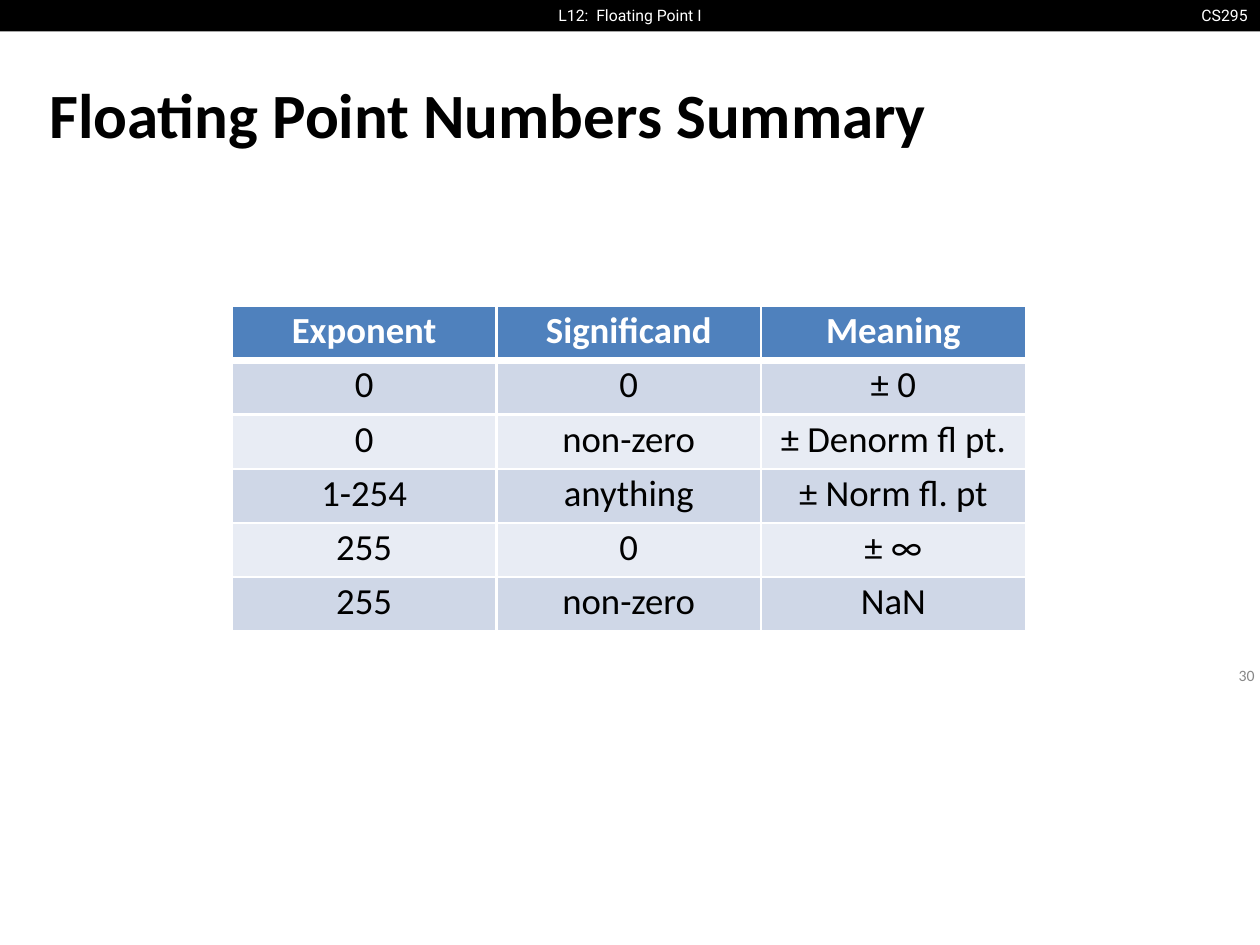
import pptx
import pptx.util
import pptx.dml.color
import pptx.enum.shapes
import pptx.enum.text
import pptx.oxml
import pptx.oxml.ns

Inches, Pt = pptx.util.Inches, pptx.util.Pt
ALIGN = pptx.enum.text.PP_ALIGN
ANCHOR = pptx.enum.text.MSO_ANCHOR

TITLE = "Floating Point Numbers Summary"
BAR = [
    ("CS295", 9.41, 0.59, ALIGN.RIGHT),
    ("L12:  Floating Point I", 4.07, 1.86, ALIGN.CENTER),
]
PAGE = "30"
ROWS = [
    ("Exponent", "Significand", "Meaning"),
    ("0", "0", "± 0"),
    ("0", "non-zero", "± Denorm fl pt."),
    ("1-254", "anything", "± Norm fl. pt"),
    ("255", "0", "± ∞"),
    ("255", "non-zero", "NaN"),
]
HEAD, BANDS = "4F81BD", ("E8ECF4", "CFD7E7")
COL, ROW = 2.1, 0.43
THIN, THICK = 1.5, 4.25


def paint(fill, color):
    fill.solid()
    fill.fore_color.rgb = pptx.dml.color.RGBColor.from_string(color)


def style(par, size, color, align, face="Calibri", bold=False):
    par.alignment = align
    par.font.size = Pt(size)
    par.font.name = face
    par.font.bold = bold
    paint(par.font.fill, color)


def inset(frame, left=0, top=0):
    frame.margin_left, frame.margin_top = Inches(left), Inches(top)
    frame.margin_right = frame.margin_bottom = 0


def label(slide, text, box):
    """Add a text box and return its frame."""
    frame = slide.shapes.add_textbox(*map(Inches, box)).text_frame
    frame.text = text
    return frame


def edge(cell, row):
    """Draw white cell borders, thick between header and body."""
    widths = {"L": THIN, "R": THIN,
              "T": THICK if row == 1 else THIN,
              "B": THICK if row == 0 else THIN}
    props = cell._tc.get_or_add_tcPr()
    for spot, (side, width) in enumerate(widths.items()):
        props.insert(spot, pptx.oxml.parse_xml(
            f'<a:ln{side} {pptx.oxml.ns.nsdecls("a")} w="{Pt(width)}">'
            '<a:solidFill><a:srgbClr val="FFFFFF"/></a:solidFill>'
            f'</a:ln{side}>'))


def add_bar(slide):
    bar = slide.shapes.add_shape(
        pptx.enum.shapes.MSO_SHAPE.RECTANGLE, 0, 0, Inches(10), Inches(0.25))
    bar.shadow.inherit = False
    paint(bar.fill, "000000")
    bar.line.fill.background()
    for text, left, width, align in BAR:
        frame = label(slide, text, (left, 0, width, 0.25))
        frame.word_wrap = False
        style(frame.paragraphs[0], 9, "FFFFFF", align, "Roboto")


def add_title(slide):
    title = slide.shapes.title
    title.left, title.top = Inches(0.39), Inches(0.48)
    title.width, title.height = Inches(9.19), Inches(0.83)
    frame = title.text_frame
    frame.text = TITLE
    frame.auto_size = pptx.enum.text.MSO_AUTO_SIZE.NONE
    frame.vertical_anchor = ANCHOR.MIDDLE
    inset(frame, top=0.01)
    style(frame.paragraphs[0], 36, "000000", ALIGN.LEFT, bold=True)


def add_grid(slide):
    count, wide = len(ROWS), len(ROWS[0])
    table = slide.shapes.add_table(
        count, wide, Inches(1.84), Inches(2.43),
        Inches(COL * wide), Inches(ROW * count)).table
    for col in table.columns:
        col.width = Inches(COL)
    for r, texts in enumerate(ROWS):
        table.rows[r].height = Inches(ROW)
        for c, text in enumerate(texts):
            cell = table.cell(r, c)
            cell.text = text
            inset(cell, top=0.02)
            par = cell.text_frame.paragraphs[0]
            par.space_before = Pt(1.8)
            style(par, 21, "000000" if r else "FFFFFF", ALIGN.CENTER,
                  bold=r == 0)
            paint(cell.fill, BANDS[r % 2] if r else HEAD)
            edge(cell, r)


def add_page(slide):
    frame = label(slide, PAGE, (9.79, 5.27, 0.21, 0.18))
    frame.word_wrap = True
    frame.vertical_anchor = ANCHOR.MIDDLE
    inset(frame, left=0.04)
    style(frame.paragraphs[0], 9, "888888", ALIGN.LEFT)


def main():
    deck = pptx.Presentation()
    deck.slide_width, deck.slide_height = Inches(10), Inches(7.5)
    slide = deck.slides.add_slide(deck.slide_layouts[5])
    add_bar(slide)
    add_title(slide)
    add_page(slide)
    add_grid(slide)
    deck.save("out.pptx")


if __name__ == "__main__":
    main()
